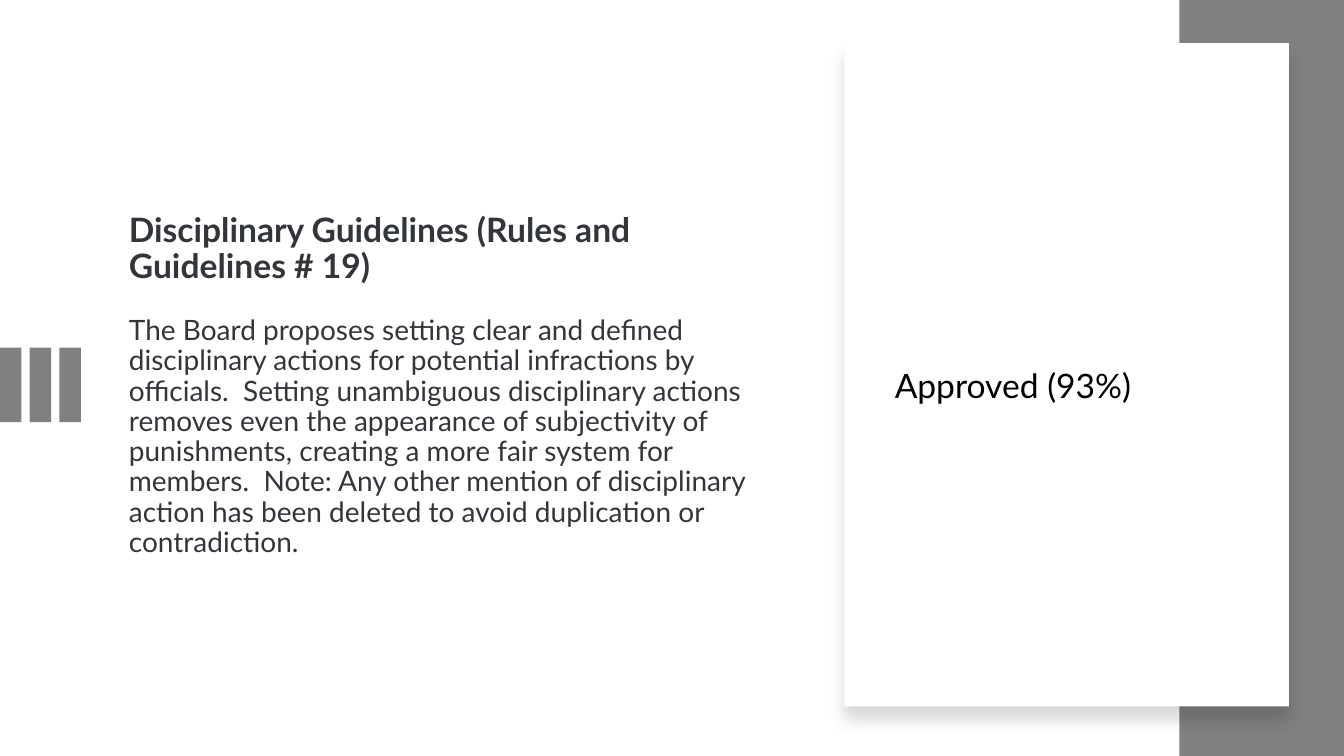
from dataclasses import dataclass

from lxml import etree
from pptx import Presentation
from pptx.dml.color import RGBColor
from pptx.enum.shapes import MSO_SHAPE
from pptx.enum.text import MSO_ANCHOR
from pptx.oxml.ns import qn
from pptx.util import Cm, Pt

RECT = MSO_SHAPE.RECTANGLE
MIDDLE = MSO_ANCHOR.MIDDLE

SLIDE_W, SLIDE_H = 33.87, 19.05
GREY, WHITE, INK, BLACK = "808080", "FFFFFF", "32363A", "000000"
FONT = "Lato"
BAR_COUNT, BAR_PITCH = 3, 0.75


@dataclass
class Box:
    left: float
    top: float
    width: float
    height: float

    def emu(self) -> tuple:
        return Cm(self.left), Cm(self.top), Cm(self.width), Cm(self.height)


@dataclass
class Para:
    text: str
    size: int
    color: str
    bold: bool = False
    before: float = 0


def rgb(value: str) -> RGBColor:
    return RGBColor.from_string(value)


def add_rect(s, box: Box, fill: str):
    sp = s.shapes.add_shape(RECT, *box.emu())
    sp.shadow.inherit = False
    sp.fill.solid()
    sp.fill.fore_color.rgb = rgb(fill)
    sp.line.fill.background()
    return sp


def add_drop_shadow(sp, color: str, alpha: int, blur: int, dist: int) -> None:
    """Cast a shadow straight down; alpha in percent, lengths in points."""
    effects = sp._element.spPr.find(qn("a:effectLst"))
    shadow = etree.SubElement(
        effects, qn("a:outerShdw"), blurRad=str(Pt(blur)), dist=str(Pt(dist)),
        dir=str(90 * 60000), algn="t", rotWithShape="0")
    clr = etree.SubElement(shadow, qn("a:srgbClr"), val=color)
    etree.SubElement(clr, qn("a:alpha"), val=str(alpha * 1000))


def add_text(s, box: Box, paras: list[Para]) -> None:
    tf = s.shapes.add_textbox(*box.emu()).text_frame
    tf.word_wrap = True
    tf.vertical_anchor = MIDDLE
    for i, para in enumerate(paras):
        p = tf.add_paragraph() if i else tf.paragraphs[0]
        p.line_spacing = 0.9
        p.space_before = Pt(para.before)
        r = p.add_run()
        r.text = para.text
        formats = {"name": FONT, "size": Pt(para.size), "bold": para.bold}
        for name, value in formats.items():
            setattr(r.font, name, value)
        r.font.color.rgb = rgb(para.color)


PROPOSAL = [
    Para("Disciplinary Guidelines (Rules and Guidelines # 19)", 24, INK, bold=True),
    Para("The Board proposes setting clear and defined disciplinary actions for "
         "potential infractions by officials.  Setting unambiguous disciplinary "
         "actions removes even the appearance of subjectivity of punishments, "
         "creating a more fair system for members.  Note: Any other mention of "
         "disciplinary action has been deleted to avoid duplication or "
         "contradiction.", 20, INK, before=22),
]
RESULT = [Para("Approved (93%)", 24, BLACK, before=10)]


def main() -> None:
    prs = Presentation()
    prs.slide_width, prs.slide_height = Cm(SLIDE_W), Cm(SLIDE_H)
    s = prs.slides.add_slide(prs.slide_layouts[6])

    add_text(s, Box(3, 3.18, 16.76, 13.08), PROPOSAL)
    for i in range(BAR_COUNT):
        add_rect(s, Box(i * BAR_PITCH, 8.76, 0.54, 1.88), GREY)
    add_rect(s, Box(29.72, 0, SLIDE_W - 29.72, SLIDE_H), GREY)
    card = add_rect(s, Box(21.28, 1.09, 11.2, 16.71), WHITE)
    add_drop_shadow(card, BLACK, alpha=15, blur=11, dist=10)
    add_text(s, Box(22.3, 4.7, 9.17, 10.11), RESULT)

    prs.save("out.pptx")


if __name__ == "__main__":
    main()
